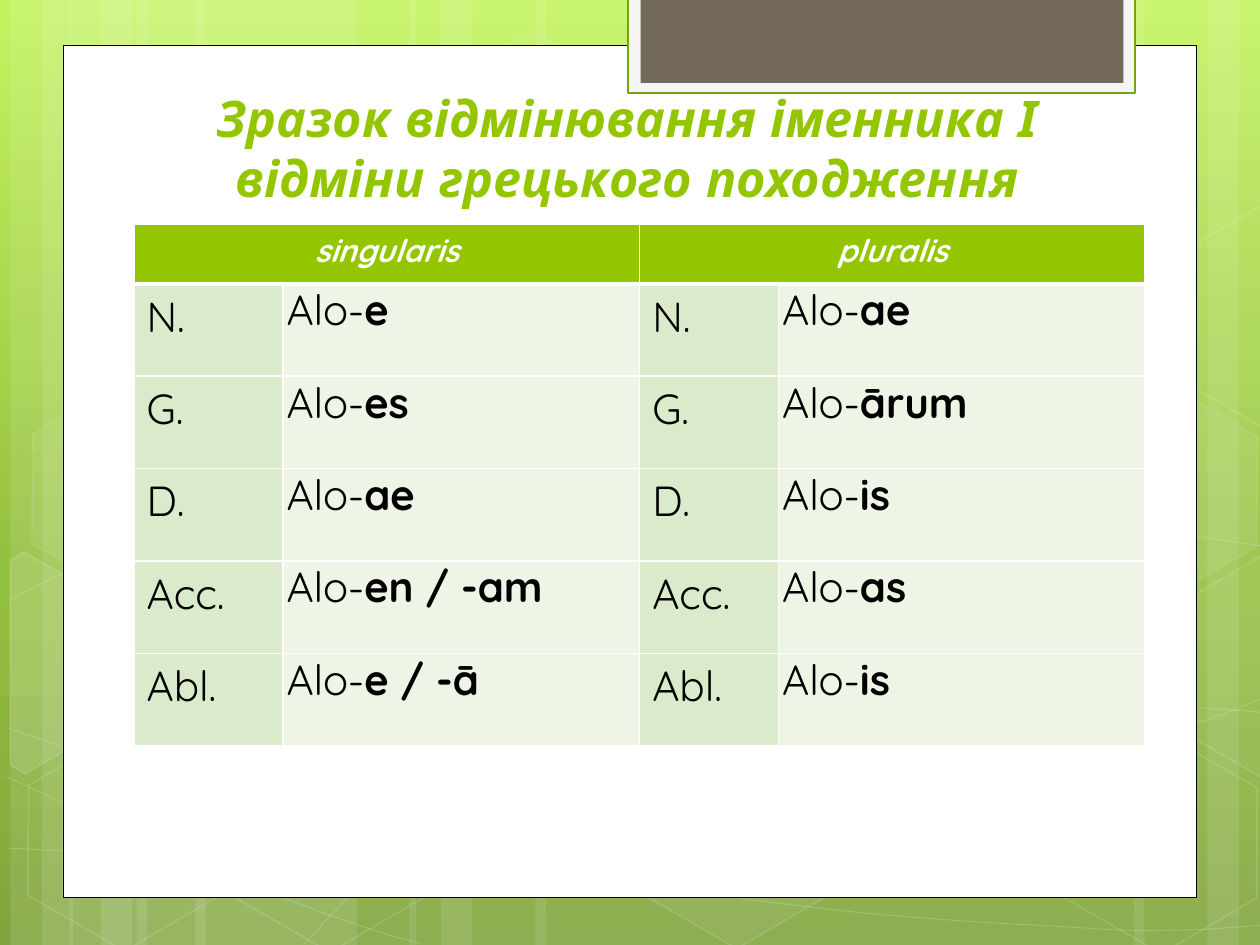
"""Builds a slide with the declension table of a Greek noun of the first declension."""
import copy
import math
from dataclasses import dataclass
from typing import Optional

from lxml import etree
from pptx import Presentation
from pptx import util as u
from pptx.dml import color as clr
from pptx.enum import shapes, text
from pptx.oxml import ns

FONT = "Quicksand"
COLORS = {
    "white": "FFFFFF", "black": "000000", "green": "94C600", "edge": "74A510",
    "tab": "F5F5F5", "brown": "71685A", "case": "DCEACC", "form": "EEF5E7",
    "sky": "C3F35F", "leaf": "93BF3F", "moss": "81A53E",
}
TILT = 30
Point = tuple[float, float]


@dataclass
class Paint:
    fill: Optional[str] = None
    fill_alpha: int = 100
    line: Optional[str] = None
    width: float = 1
    line_alpha: int = 100


@dataclass
class Box:
    left: float
    top: float
    width: float
    height: float
    paint: Paint


@dataclass
class CutHexagon:
    center: Point
    paint: Paint
    corners: list[Point]


@dataclass
class Case:
    name: str
    singular: str
    plural: str


def glass(fill_alpha: int, line_alpha: int) -> Paint:
    return Paint("white" if fill_alpha else None, fill_alpha, "white", 1, line_alpha)


STRIPES = [(78, 126), (6, 36), (24, 60), (111.6, 126), (39.6, 36), (57.6, 60),
           (528, 126), (690, 36), (648, 60), (306, 222), (234, 36), (252, 60)]
WAVES = [
    [(5, 484.6), (43.9, 486.7), (82.8, 488.9), (136.8, 488.2), (190.8, 487.4),
     (257.8, 486), (329.8, 478.8), (401.8, 471.6), (504, 457.9), (570.2, 444.2),
     (635.8, 429.8), (703.4, 409), (725, 396.7)],
    [(5, 343.4), (25.9, 331.9), (46.8, 321.1), (87.1, 310.3), (128.2, 299.5),
     (186.5, 283.7), (249.8, 278.6), (313.9, 273.6), (391.7, 272.9), (470.9, 278.6),
     (550.1, 284.4), (681.8, 306.7), (725, 312.5)],
    [(4.3, 444.2), (91.4, 483.8), (177.8, 523.4), (240.5, 539.3)],
    [(5, 416.2), (27.4, 424.1), (50.4, 432), (92.2, 443.5), (133.9, 454.3),
     (196.6, 472.3), (257, 484.6), (316.8, 496.8), (392.4, 509.8), (452.2, 517),
     (511.9, 524.9), (576, 527.8), (614.2, 529.9), (651.6, 532.8), (661.7, 531.4),
     (680.4, 531.4), (699.1, 530.6), (712.1, 529.2), (725, 528.5)],
    [(174.2, 539.3), (187.2, 524.9), (200.2, 510.5), (217.4, 497.5), (234.7, 484.6),
     (259.2, 470.2), (279.4, 460.1), (299.5, 450), (311.8, 445.7), (338.4, 438.5),
     (364.3, 431.3), (412.6, 421.2), (437.8, 416.2), (463.7, 411.1), (467.3, 411.1),
     (489.6, 409.7), (511.9, 407.5), (547.2, 405.4), (571.7, 404.6), (596.9, 403.9),
     (637.9, 404.6), (637.9, 404.6), (654, 404.6), (670.1, 404.6), (686.2, 404.6),
     (699.1, 405.4), (711.4, 406.1), (717.8, 406.8), (724.3, 407.5), (722, 406.8),
     (724.3, 407.5)],
]
HEXAGONS = [
    Box(left, top, 126, 109.4, glass(fill, line)) for left, top, fill, line in [
        (240.5, 25.9, 4, 8), (357.8, 424.1, 6, 12), (7.9, 425.5, 0, 12),
        (10.1, 224.6, 7, 8), (125.3, 426.2, 0, 12), (542.2, 326.2, 10, 12),
        (600.5, 427, 0, 12), (600.5, 226.1, 7, 8)]
]
CUT_HEXAGONS = [
    CutHexagon((25.9, 385.2), glass(10, 12), [
        (5.8, 320.4), (13.7, 315.4), (69.1, 347), (68.4, 410.4), (14.4, 442.1), (5.8, 437)]),
    CutHexagon((709.2, 374.4), glass(4, 12), [
        (666.7, 349.2), (720.7, 317.5), (726.5, 321.1), (726.5, 441.4), (721.4, 444.2),
        (666.7, 412.6)]),
    CutHexagon((709.2, 173.5), glass(0, 12), [
        (666.7, 149), (720.7, 117.4), (727.2, 121), (726.5, 241.2), (721.4, 244.1),
        (666.7, 212.4)]),
]
PANELS = [
    Box(36, 25.9, 648, 487, Paint("white", line="black", width=0.5)),
    Box(359, -1.4, 289.7, 54.7, Paint("tab", line="edge", width=1.25)),
    Box(366, -1.4, 276, 48.8, Paint("brown")),
]
CASES = [Case("N.", "e", "ae"), Case("G.", "es", "ārum"), Case("D.", "ae", "is"),
         Case("Acc.", "en / -am", "as"), Case("Abl.", "e / -ā", "is")]


def rgb(name: str) -> clr.RGBColor:
    return clr.RGBColor.from_string(COLORS[name])


def set_alpha(parent, percent: int) -> None:
    if percent < 100:
        tint = parent.find(f"{ns.qn('a:solidFill')}/{ns.qn('a:srgbClr')}")
        etree.SubElement(tint, ns.qn("a:alpha"), val=str(percent * 1000))


def apply_paint(shape, paint: Paint) -> None:
    shape.shadow.inherit = False
    properties = shape.element.spPr
    if paint.fill:
        shape.fill.solid()
        shape.fill.fore_color.rgb = rgb(paint.fill)
        set_alpha(properties, paint.fill_alpha)
    else:
        shape.fill.background()
    if paint.line:
        shape.line.color.rgb = rgb(paint.line)
        shape.line.width = u.Pt(paint.width)
        set_alpha(properties.find(ns.qn("a:ln")), paint.line_alpha)
    else:
        shape.line.fill.background()


def draw_box(canvas, box: Box, kind=shapes.MSO_SHAPE.RECTANGLE):
    sides = (u.Pt(side) for side in (box.left, box.top, box.width, box.height))
    shape = canvas.add_shape(kind, *sides)
    apply_paint(shape, box.paint)
    return shape


def draw_hexagon(canvas, box: Box) -> None:
    hexagon = draw_box(canvas, box, shapes.MSO_SHAPE.HEXAGON)
    hexagon.adjustments[0], hexagon.adjustments[1] = 0.285, 1.155
    hexagon.rotation = TILT


def draw_outline(canvas, points: list[Point], paint: Paint, close: bool):
    start, *rest = [(u.Pt(x), u.Pt(y)) for x, y in points]
    builder = canvas.build_freeform(*start)
    builder.add_line_segments(rest, close=close)
    outline = builder.convert_to_shape()
    apply_paint(outline, paint)
    return outline


def draw_wave(canvas, knots: list[Point]) -> None:
    wave = draw_outline(canvas, knots, Paint(None, 100, "white", 0.5, 20), False)
    steps = list(wave.element.iter(ns.qn("a:lnTo")))
    for first in range(0, len(steps), 3):
        curve = etree.Element(ns.qn("a:cubicBezTo"))
        steps[first].addprevious(curve)
        for step in steps[first:first + 3]:
            curve.append(step[0])
            step.getparent().remove(step)


def draw_cut_hexagon(canvas, cut: CutHexagon) -> None:
    cos, sin = math.cos(math.radians(TILT)), math.sin(math.radians(TILT))
    cx, cy = cut.center
    upright = [(cx + cos * (x - cx) + sin * (y - cy), cy - sin * (x - cx) + cos * (y - cy))
               for x, y in cut.corners]
    draw_outline(canvas, upright, cut.paint, True).rotation = TILT


def add_run(paragraph, words: str, size: float, color: str, bold=False, italic=False) -> None:
    run = paragraph.add_run()
    run.text = words
    font = run.font
    font.name, font.size, font.bold, font.italic = FONT, u.Pt(size), bold, italic
    font.color.rgb = rgb(color)


def style_cell(cell, fill: str, bottom: float = 1, top: float = 1) -> None:
    properties = cell._tc.get_or_add_tcPr()
    for side, width in (("L", 1), ("R", 1), ("T", top), ("B", bottom)):
        border = etree.SubElement(properties, ns.qn(f"a:ln{side}"), w=str(u.Pt(width)))
        paint = etree.SubElement(border, ns.qn("a:solidFill"))
        etree.SubElement(paint, ns.qn("a:srgbClr"), val=COLORS["white"])
    cell.fill.solid()
    cell.fill.fore_color.rgb = rgb(fill)


def fill_background(slide) -> None:
    fill = slide.background.fill
    fill.gradient()
    fill.gradient_angle = 270
    stops = slide.element.find(f".//{ns.qn('a:gsLst')}")
    stops.append(copy.deepcopy(stops[0]))
    for stop, (place, name) in zip(fill.gradient_stops,
                                   [(0, "sky"), (0.62, "leaf"), (1, "moss")]):
        stop.position, stop.color.rgb = place, rgb(name)


def draw_decor(canvas) -> None:
    for left, width in STRIPES:
        draw_box(canvas, Box(left, 0, width, 540, Paint("white", 10)))
    for wave in WAVES:
        draw_wave(canvas, wave)
    for hexagon in HEXAGONS:
        draw_hexagon(canvas, hexagon)
    for cut in CUT_HEXAGONS:
        draw_cut_hexagon(canvas, cut)


def write_title(slide, words: str) -> None:
    title = slide.shapes.title
    slide.shapes.element.append(title.element)
    title.left, title.top, title.width, title.height = map(u.Pt, (82, 43.2, 553, 79.2))
    frame = title.text_frame
    frame.word_wrap = True
    frame.auto_size = text.MSO_AUTO_SIZE.NONE
    frame.vertical_anchor = text.MSO_ANCHOR.BOTTOM
    heading = frame.paragraphs[0]
    heading.alignment, heading.line_spacing = text.PP_ALIGN.CENTER, 1.0
    add_run(heading, words, 28.8, "green", True, True)


def draw_declension(slide) -> None:
    widths, heights = [85, 204, 79.2, 209.6], [34] + [52.8] * len(CASES)
    table = slide.shapes.add_table(len(heights), len(widths), u.Pt(76.6), u.Pt(128.2),
                                   u.Pt(sum(widths)), u.Pt(sum(heights))).table
    for column, width in zip(table.columns, widths):
        column.width = u.Pt(width)
    for row, height in zip(table.rows, heights):
        row.height = u.Pt(height)
    for index in range(len(widths)):
        style_cell(table.cell(0, index), "green", bottom=3)
    for left, number in ((0, "singularis"), (2, "pluralis")):
        header = table.cell(0, left)
        header.merge(table.cell(0, left + 1))
        paragraph = header.text_frame.paragraphs[0]
        paragraph.alignment = text.PP_ALIGN.CENTER
        add_run(paragraph, number, 18, "white", True, True)
        for row, case in enumerate(CASES, 1):
            label, form = table.cell(row, left), table.cell(row, left + 1)
            for cell, fill in ((label, "case"), (form, "form")):
                style_cell(cell, fill, top=3 if row == 1 else 1)
            add_run(label.text_frame.paragraphs[0], case.name, 24, "black")
            form.margin_left = form.margin_right = u.Pt(2.2)
            form.margin_top = form.margin_bottom = u.Pt(0)
            word = form.text_frame.paragraphs[0]
            add_run(word, "Alo-", 24, "black")
            add_run(word, case.plural if left else case.singular, 24, "black", True)


def main() -> None:
    deck = Presentation()
    deck.slide_width, deck.slide_height = u.Pt(720), u.Pt(540)
    slide = deck.slides.add_slide(deck.slide_layouts[5])
    fill_background(slide)
    draw_decor(slide.shapes.add_group_shape().shapes)
    for panel in PANELS:
        draw_box(slide.shapes, panel)
    write_title(slide, "Зразок відмінювання іменника І відміни грецького походження")
    draw_declension(slide)
    deck.save("out.pptx")


if __name__ == "__main__":
    main()
